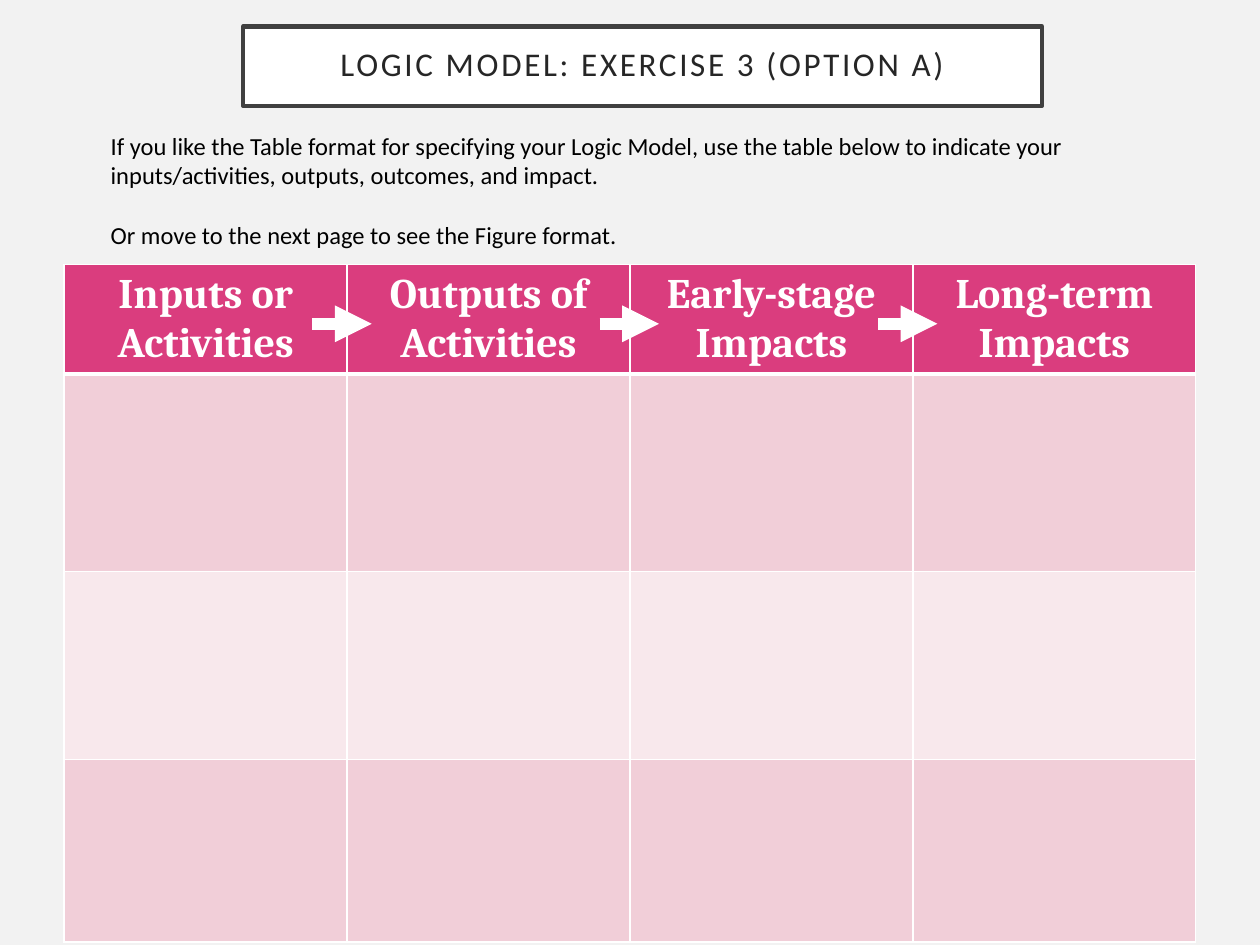
from lxml import etree
from pptx import Presentation
from pptx.dml.color import RGBColor
from pptx.enum import shapes, text
from pptx.oxml import ns
from pptx.util import Inches, Pt

BACKGROUND = RGBColor(0xF2, 0xF2, 0xF2)
WHITE = RGBColor(0xFF, 0xFF, 0xFF)
BLACK = RGBColor(0, 0, 0)
FRAME = RGBColor(0x40, 0x40, 0x40)
TITLE_INK = RGBColor(0x26, 0x26, 0x26)
HEADER = RGBColor(0xDA, 0x3D, 0x7E)
BAND_DARK = RGBColor(0xF1, 0xCE, 0xD8)
BAND_LIGHT = RGBColor(0xF8, 0xE8, 0xEC)

INSTRUCTIONS = [
    "If you like the Table format for specifying your Logic Model, use the table below "
    "to indicate your inputs/activities, outputs, outcomes, and impact.",
    "Or move to the next page to see the Figure format.",
]
HEADINGS = ["Inputs or Activities", "Outputs of Activities",
            "Early-stage Impacts", "Long-term Impacts"]
ROW_HEIGHTS = [0.76, 1.57, 1.49, 1.45]
ROW_FILLS = [HEADER, BAND_DARK, BAND_LIGHT, BAND_DARK]
ARROW_LEFTS = [2.48, 4.76, 6.97]


def write_text(tf, lines, size, color, font="Calibri", bold=False,
               align=text.PP_ALIGN.LEFT, line_spacing=None, gap=0, tracking=None):
    """Fill a text frame with one formatted paragraph per line."""
    for i, line in enumerate(lines):
        p = tf.add_paragraph() if i else tf.paragraphs[0]
        p.alignment = align
        if line_spacing:
            p.line_spacing = line_spacing
        if i and gap:
            p.space_before = Pt(gap)
        r = p.add_run()
        r.text = line
        r.font.name, r.font.size, r.font.bold = font, Pt(size), bold
        r.font.color.rgb = color
        if tracking:
            r._r.get_or_add_rPr().set("spc", str(int(tracking * 100)))


def add_title(s, left, top, width, height):
    """Draw the framed title."""
    sp = s.shapes.add_shape(shapes.MSO_SHAPE.RECTANGLE, left, top, width, height)
    sp.shadow.inherit = False
    sp.fill.solid()
    sp.fill.fore_color.rgb = WHITE
    sp.line.color.rgb = FRAME
    sp.line.width = Pt(2.5)
    tf = sp.text_frame
    tf.word_wrap = True
    tf.vertical_anchor = text.MSO_ANCHOR.MIDDLE
    tf.margin_left = tf.margin_right = tf.margin_top = tf.margin_bottom = Inches(0.2)
    write_text(tf, ["LOGIC MODEL: EXERCISE 3 (OPTION A)"], 18.9, TITLE_INK,
               align=text.PP_ALIGN.CENTER, line_spacing=0.9, tracking=1.5)


def add_instructions(s, left, top, width, height):
    """Place the instructions above the table."""
    tf = s.shapes.add_textbox(left, top, width, height).text_frame
    tf.word_wrap = True
    write_text(tf, INSTRUCTIONS, 14, BLACK, gap=17)


def set_borders(cell, bottom):
    """Give a cell white borders with its own bottom width."""
    tcPr = cell._tc.get_or_add_tcPr()
    for i, (tag, width) in enumerate([("lnL", 1), ("lnR", 1), ("lnT", 1), ("lnB", bottom)]):
        ln = etree.Element(ns.qn(f"a:{tag}"), w=str(Pt(width)))
        fill = etree.SubElement(ln, ns.qn("a:solidFill"))
        etree.SubElement(fill, ns.qn("a:srgbClr"), val=str(WHITE))
        tcPr.insert(i, ln)


def add_model_table(s, left, top, width, height):
    """Build the banded logic model table with its headings."""
    table = s.shapes.add_table(len(ROW_HEIGHTS), len(HEADINGS), left, top, width, height).table
    for row, row_height, fill in zip(table.rows, ROW_HEIGHTS, ROW_FILLS):
        row.height = Inches(row_height)
        for cell in row.cells:
            cell.fill.solid()
            cell.fill.fore_color.rgb = fill
            set_borders(cell, 3 if fill == HEADER else 1)
    for cell, heading in zip(table.rows[0].cells, HEADINGS):
        write_text(cell.text_frame, [heading], 24, WHITE, font="Cambria", bold=True,
                   align=text.PP_ALIGN.CENTER)


def add_arrow(s, left, y, width):
    """Draw a thick white arrow pointing right."""
    arrow = s.shapes.add_connector(shapes.MSO_CONNECTOR.STRAIGHT, left, y, left + width, y)
    arrow.line.color.rgb = WHITE
    arrow.line.width = Pt(7)
    etree.SubElement(arrow.line._get_or_add_ln(), ns.qn("a:tailEnd"), type="triangle")
    etree.SubElement(arrow._element.spPr, ns.qn("a:effectLst"))


def main():
    """Build and save the slide."""
    prs = Presentation()
    prs.slide_width, prs.slide_height = Inches(10), Inches(7.5)
    s = prs.slides.add_slide(prs.slide_layouts[6])
    s.background.fill.solid()
    s.background.fill.fore_color.rgb = BACKGROUND
    add_title(s, Inches(1.93), Inches(0.21), Inches(6.34), Inches(0.63))
    add_model_table(s, Inches(0.51), Inches(2.1), Inches(8.98), Inches(sum(ROW_HEIGHTS)))
    add_instructions(s, Inches(0.78), Inches(0.99), Inches(8.44), Inches(1.04))
    for left in ARROW_LEFTS:
        add_arrow(s, Inches(left), Inches(2.57), Inches(0.47))
    prs.save("out.pptx")


if __name__ == "__main__":
    main()
